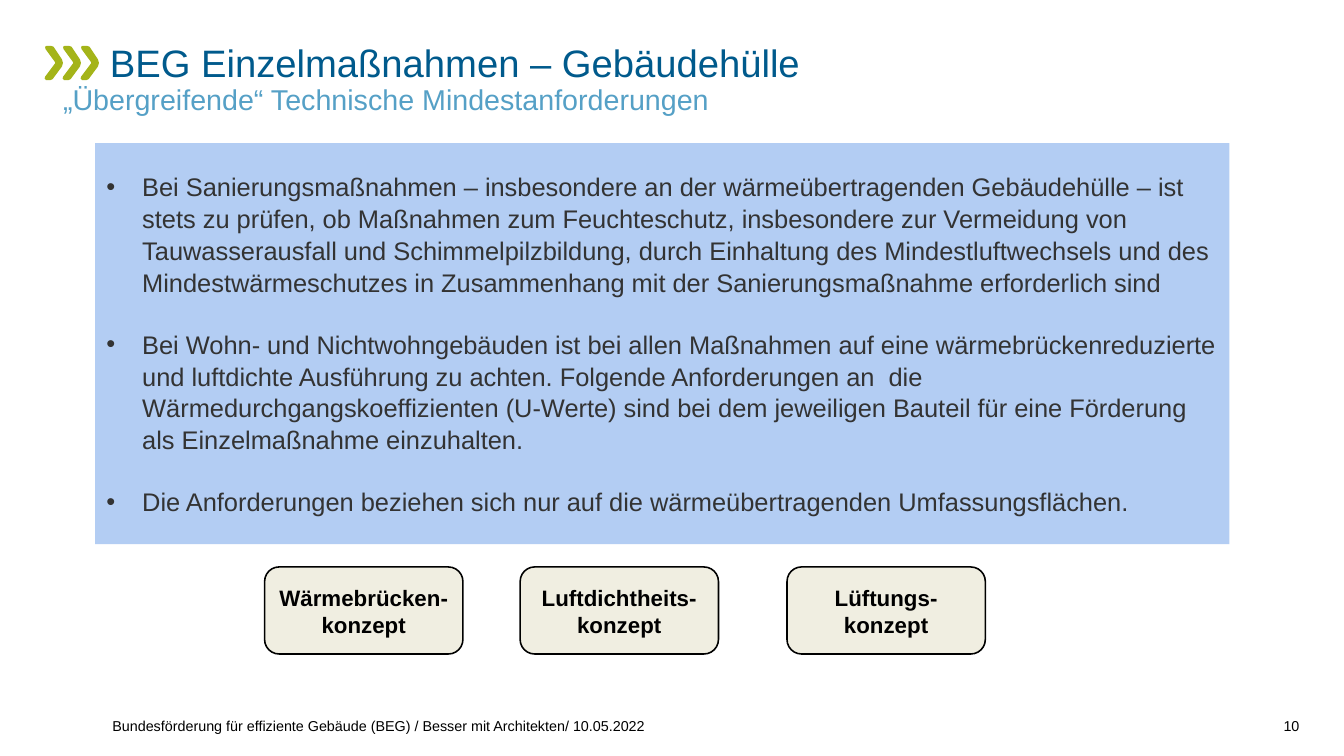
from pptx import Presentation
from pptx.dml.color import RGBColor
from pptx.enum.shapes import MSO_SHAPE as Shape
from pptx.enum.text import MSO_ANCHOR as Anchor, PP_ALIGN as Align
from pptx.oxml.ns import qn
from pptx.util import Pt
from lxml.etree import SubElement

GREEN = RGBColor(0xA4, 0xB4, 0x19)
DARK_BLUE = RGBColor(0x00, 0x5A, 0x8C)
MID_BLUE = RGBColor(0x55, 0xA0, 0xC6)
PALE_BLUE = RGBColor(0xB3, 0xCD, 0xF3)
CREAM = RGBColor(0xF0, 0xEE, 0xE1)
GREY = RGBColor(0x33, 0x33, 0x33)
BLACK = RGBColor(0, 0, 0)

deck = Presentation()
deck.slide_width, deck.slide_height = Pt(844.56), Pt(475.2)
page = deck.slides.add_slide(deck.slide_layouts[6])


def write(box, text, size, color, bold=False, align=Align.LEFT, anchor=Anchor.TOP,
          spacing=1.0, gap=0, inset=None, wrap=True, indent=0, hanging=0, bullet=None):
    """Fill a box with one paragraph per line of text."""
    frame = box.text_frame
    frame.word_wrap = wrap
    frame.vertical_anchor = anchor
    if inset is not None:
        frame.margin_left = frame.margin_right = Pt(inset)
        frame.margin_top = frame.margin_bottom = Pt(inset)
    for index, line in enumerate(text.split("\n")):
        para = frame.add_paragraph() if index else frame.paragraphs[0]
        para.alignment = align
        para.line_spacing = spacing
        if index and gap:
            para.space_before = Pt(gap)
        props = para._p.get_or_add_pPr()
        props.set("marL", str(Pt(hanging)))
        props.set("indent", str(Pt(indent - hanging)))
        if bullet:
            SubElement(props, qn("a:buFont")).set("typeface", "Arial")
            SubElement(props, qn("a:buChar")).set("char", bullet)
        span = para.add_run()
        span.text = line
        span.font.name = "Arial"
        span.font.size = Pt(size)
        span.font.bold = bold
        span.font.color.rgb = color


# Three chevrons beside the title
CHEVRON = [(1.4, 0), (0.3, 0.6), (0.5, 2), (6.6, 10.4), (6.6, 11), (0.3, 19.4),
           (0, 20.6), (0.9, 21.6), (3.6, 21.6), (5, 21), (10.9, 13), (11.5, 10.8),
           (10.9, 8.6), (5.6, 0.6), (3.8, 0)]
for number in range(3):
    left = 28.1 + number * 11.3
    corners = [(Pt(left + x), Pt(28.8 + y)) for x, y in CHEVRON]
    outline = page.shapes.build_freeform(*corners[0])
    outline.add_line_segments(corners[1:])
    chevron = outline.convert_to_shape()
    chevron.shadow.inherit = False
    chevron.fill.solid()
    chevron.fill.fore_color.rgb = GREEN
    chevron.line.fill.background()

# Title, subtitle, footer and page number
labels = [
    ("BEG Einzelmaßnahmen – Gebäudehülle", (39.6, 26.6, 776.9, 29.5),
     dict(size=24, color=DARK_BLUE, spacing=0.95, indent=29.5)),
    ("„Übergreifende“ Technische Mindestanforderungen", (39.6, 53.3, 776.9, 25.9),
     dict(size=18, color=MID_BLUE, spacing=0.95)),
    ("Bundesförderung für effiziente Gebäude (BEG) / Besser mit Architekten/ 10.05.2022",
     (70.6, 441.4, 712.8, 20.2), dict(size=9, color=BLACK, anchor=Anchor.BOTTOM)),
    ("10", (787, 441.4, 29.5, 20.2),
     dict(size=9, color=BLACK, anchor=Anchor.BOTTOM, align=Align.RIGHT)),
]
for text, place, style in labels:
    box = page.shapes.add_textbox(*map(Pt, place))
    write(box, text, inset=0, **style)

# Requirements panel
REQUIREMENTS = [
    "Bei Sanierungsmaßnahmen – insbesondere an der wärmeübertragenden Gebäudehülle – ist "
    "stets zu prüfen, ob Maßnahmen zum Feuchteschutz, insbesondere zur Vermeidung von "
    "Tauwasserausfall und Schimmelpilzbildung, durch Einhaltung des Mindestluftwechsels und des "
    "Mindestwärmeschutzes in Zusammenhang mit der Sanierungsmaßnahme erforderlich sind",
    "Bei Wohn- und Nichtwohngebäuden ist bei allen Maßnahmen auf eine wärmebrückenreduzierte "
    "und luftdichte Ausführung zu achten. Folgende Anforderungen an  die "
    "Wärmedurchgangskoeffizienten (U-Werte) sind bei dem jeweiligen Bauteil für eine Förderung "
    "als Einzelmaßnahme einzuhalten.",
    "Die Anforderungen beziehen sich nur auf die wärmeübertragenden Umfassungsflächen.",
]
panel = page.shapes.add_shape(Shape.RECTANGLE, Pt(59.8), Pt(90), Pt(712.8), Pt(252))
panel.shadow.inherit = False
panel.fill.solid()
panel.fill.fore_color.rgb = PALE_BLUE
panel.line.fill.background()
write(panel, "\n".join(REQUIREMENTS), size=16, color=GREY, anchor=Anchor.MIDDLE,
      spacing=1.04, gap=19.2, hanging=22.5, bullet="•")

# Concept boxes
for left, topic in [(166.3, "Wärmebrücken-"), (326.9, "Luftdichtheits-"), (494.6, "Lüftungs-")]:
    concept = page.shapes.add_shape(Shape.ROUNDED_RECTANGLE, Pt(left), Pt(356.4), Pt(124.6), Pt(54.7))
    concept.shadow.inherit = False
    concept.fill.solid()
    concept.fill.fore_color.rgb = CREAM
    concept.line.color.rgb = BLACK
    concept.line.width = Pt(1)
    write(concept, topic + "\nkonzept", size=14, color=BLACK, bold=True, align=Align.CENTER,
          anchor=Anchor.MIDDLE, spacing=1.04, wrap=False)

deck.save("out.pptx")
